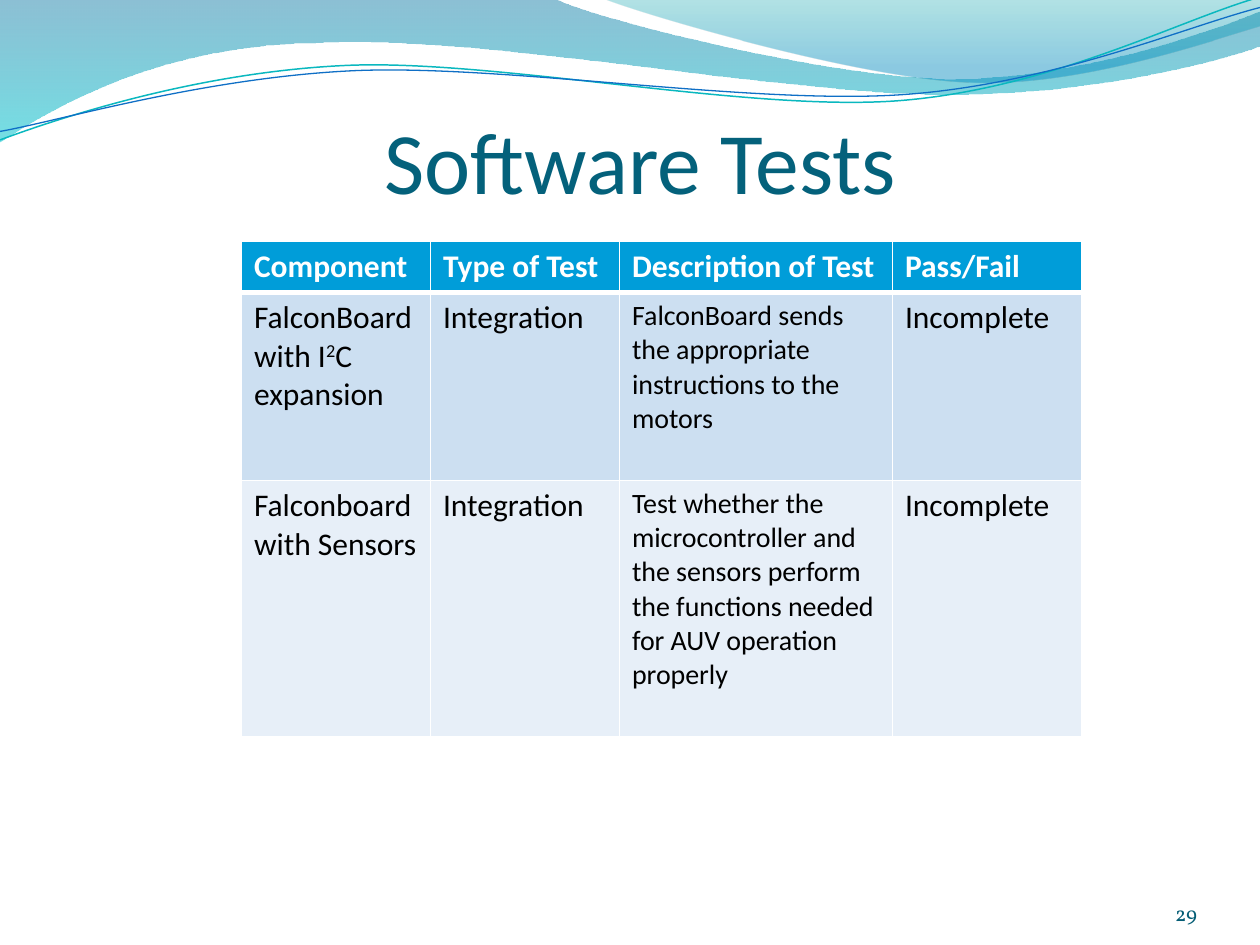
from lxml.etree import SubElement as add_element
from pptx import Presentation
from pptx.dml.color import RGBColor
from pptx.enum.text import MSO_ANCHOR as Anchor, PP_ALIGN as Align
from pptx.oxml.ns import qn
from pptx.util import Pt

WAVES = [
    (((0, -0.7), (317, -0.7), (343, 12, 478, 45, 546, 45), (614, 45, 690, 19, 720, 6.5),
      (721, 26), (708, 32, 626, 55, 537, 54), (448, 54, 275, 20, 185, 24.5),
      (93, 25, 33, 60, -0.7, 81.4)),
     ((0, "0074A1", 45), (1, "00C6CF", 55))),
    (((345, -0.7), (366, 8, 491, 45, 554, 47), (616, 50, 692, 23, 720, 15), (720, 0)),
     ((0, "00A1A9", 30), (0.8, "008BBF", 45))),
]
STRANDS = [
    (((-1.4, 63), (34.2, 51.7, 114.3, 29.4, 199.4, 29.8),
      (284.4, 30.4, 425.9, 67.2, 512.1, 64.8), (599.3, 62.3, 676.1, 25.9, 720.6, 15.6)),
     "0AB8BF", 0.85),
    (((-1.1, 58.1), (33.1, 53.7, 118.2, 32.6, 204.3, 33),
      (290.3, 33.7, 429.1, 63.3, 515.3, 61.4), (601.5, 59.4, 678.9, 30, 721.4, 21.3)),
     "0F6FC6", 0.75),
]
STRAND_ROTATION = 357.3
ROWS = [
    ("Component", "Type of Test", "Description of Test", "Pass/Fail"),
    ("FalconBoard with I^2^C expansion", "Integration",
     "FalconBoard sends the appropriate instructions to the motors", "Incomplete"),
    ("Falconboard with Sensors", "Integration",
     "Test whether the microcontroller and the sensors perform the functions "
     "needed for AUV operation properly", "Incomplete"),
]
COLUMN_WIDTHS = (108, 108, 156, 108)
ROW_HEIGHTS = (29.2, 107.4, 146.3)
ROW_FILLS = ("009DD9", "CCDFF1", "E7EFF8")


def color(value):
    """Turn a hex string into a colour."""
    return RGBColor.from_string(value)


def format_object(target, **values):
    """Set each given attribute on the target."""
    for name, value in values.items():
        setattr(target, name, value)


def bend(shape, segments):
    """Turn the lines of a freeform into curves where a segment has six numbers."""
    lines = list(shape.element.iter(qn("a:lnTo")))
    for line, segment in zip(lines, segments):
        if len(segment) == 2:
            continue
        line.tag = qn("a:cubicBezTo")
        line.clear()
        for x, y in zip(segment[::2], segment[1::2]):
            add_element(line, qn("a:pt"), x=str(Pt(x) - shape.left), y=str(Pt(y) - shape.top))


def add_outline(slide, segments, close):
    """Add a freeform without shadow that follows the segments."""
    points = [(Pt(segment[-2]), Pt(segment[-1])) for segment in segments]
    builder = slide.shapes.build_freeform(*points[0])
    builder.add_line_segments(points[1:], close=close)
    shape = builder.convert_to_shape()
    bend(shape, segments[1:])
    shape.shadow.inherit = False
    return shape


def add_wave(slide, segments, stops):
    """Add a closed band with a vertical translucent gradient."""
    shape = add_outline(slide, segments, True)
    shape.line.fill.background()
    shape.fill.gradient()
    shape.fill.gradient_angle = 270
    for stop, (position, value, _) in zip(shape.fill.gradient_stops, stops):
        stop.position = position
        stop.color.rgb = color(value)
    for element, stop in zip(shape.element.iter(qn("a:srgbClr")), stops):
        add_element(element, qn("a:alpha"), val=str(stop[2] * 1000))


def add_strand(slide, segments, value, width):
    """Add an open, slightly turned curved line."""
    shape = add_outline(slide, segments, False)
    shape.rotation = STRAND_ROTATION
    shape.fill.background()
    shape.line.color.rgb = color(value)
    shape.line.width = Pt(width)


def write(frame, text, size, value, font="Calibri", bold=False, align=Align.LEFT):
    """Write one paragraph, raising the parts between carets."""
    paragraph = frame.paragraphs[0]
    paragraph.alignment = align
    for index, part in enumerate(text.split("^")):
        run = paragraph.add_run()
        run.text = part
        format_object(run.font, name=font, size=Pt(size), bold=bold)
        run.font.color.rgb = color(value)
        if index % 2:
            run.font._element.set("baseline", "30000")


def place_text(shape, box, text, size, value, **style):
    """Position a text shape and write bottom-anchored text in it."""
    format_object(shape, **dict(zip(("left", "top", "width", "height"), map(Pt, box))))
    format_object(shape.text_frame, word_wrap=True, vertical_anchor=Anchor.BOTTOM,
                  margin_left=0, margin_right=0, margin_top=0, margin_bottom=0)
    write(shape.text_frame, text, size, value, **style)


def add_borders(cell, top, bottom):
    """Give a cell white borders."""
    properties = cell._tc.get_or_add_tcPr()
    for side, width in (("L", 1), ("R", 1), ("T", top), ("B", bottom)):
        line = add_element(properties, qn(f"a:ln{side}"), w=str(Pt(width)))
        add_element(add_element(line, qn("a:solidFill")), qn("a:srgbClr"), val="FFFFFF")


def add_test_table(slide):
    """Add the table of software tests."""
    table = slide.shapes.add_table(len(ROWS), len(COLUMN_WIDTHS), Pt(138), Pt(138),
                                   Pt(sum(COLUMN_WIDTHS)), Pt(sum(ROW_HEIGHTS))).table
    for column, width in zip(table.columns, COLUMN_WIDTHS):
        column.width = Pt(width)
    for row_index, texts in enumerate(ROWS):
        table.rows[row_index].height = Pt(ROW_HEIGHTS[row_index])
        header = row_index == 0
        for column_index, text in enumerate(texts):
            cell = table.cell(row_index, column_index)
            add_borders(cell, 3 if row_index == 1 else 1, 3 if header else 1)
            cell.fill.solid()
            cell.fill.fore_color.rgb = color(ROW_FILLS[row_index])
            size = 16 if column_index == 2 and not header else 18
            write(cell.text_frame, text, size, "FFFFFF" if header else "000000", bold=header)


def main():
    """Build and save the slide."""
    presentation = Presentation()
    format_object(presentation, slide_width=Pt(720), slide_height=Pt(540))
    slide = presentation.slides.add_slide(presentation.slide_layouts[5])
    for segments, stops in WAVES:
        add_wave(slide, segments, stops)
    for segments, value, width in STRANDS:
        add_strand(slide, segments, value, width)
    place_text(slide.shapes.title, (42, 65.5, 648, 55.5), "Software Tests", 50, "04617B",
               align=Align.CENTER)
    number_box = slide.shapes.add_textbox(0, 0, 0, 0)
    place_text(number_box, (624, 500, 60, 28.8), "29", 12, "045D75",
               font="Vollkorn", align=Align.RIGHT)
    add_test_table(slide)
    presentation.save("out.pptx")


if __name__ == "__main__":
    main()
